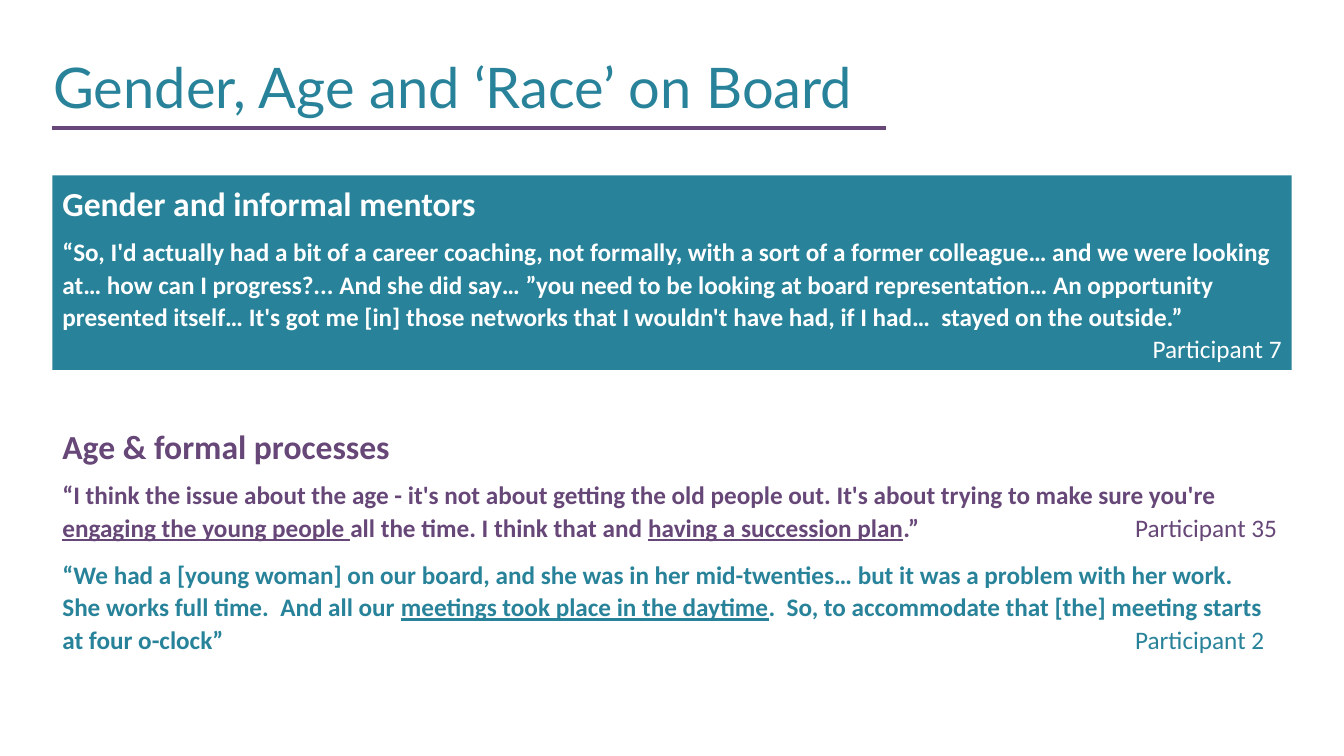
import lxml.etree
import pptx
import pptx.dml.color
import pptx.enum.shapes
import pptx.enum.text
import pptx.oxml.ns
import pptx.util

Inches = pptx.util.Inches
Pt = pptx.util.Pt
Color = pptx.dml.color.RGBColor
Align = pptx.enum.text.PP_ALIGN
Anchor = pptx.enum.text.MSO_ANCHOR
Fit = pptx.enum.text.MSO_AUTO_SIZE
qn = pptx.oxml.ns.qn

TEAL = Color(0x28, 0x83, 0x9A)
PLUM = Color(0x66, 0x47, 0x78)
WHITE = Color(0xFF, 0xFF, 0xFF)

LEFT = 0.52
WIDTH = 12.29
TAB = 10.64

BOLD, LINED, PLAIN = "bold", "lined", "plain"

MENTOR = [
    ("“So, I'd actually had a bit of a career coaching, not formally, with a sort of "
     "a former colleague… and we were looking at… how can I progress?... And she did "
     "say… ”you need to be looking at board representation… An opportunity presented "
     "itself… It's got me [in] those networks that I wouldn't have had, if I had…  "
     "stayed on the outside.”", BOLD),
]
YOUNG = [
    ("“We had a [young woman] on our board, and she was in her mid-twenties… but it "
     "was a problem with her work.  She works full time.  And all our ", BOLD),
    ("meetings took place in the daytime", LINED),
    (".  So, to accommodate that [the] meeting starts at four o-clock”", BOLD),
    ("\tParticipant 2", PLAIN),
]
AGE = [
    ("“I think the issue about the age - it's not about getting the old people out. "
     "It's about trying to make sure you're ", BOLD),
    ("engaging the young people ", LINED),
    ("all the time. I think that and ", BOLD),
    ("having a succession plan", LINED),
    (".”", BOLD),
    ("\tParticipant 35", PLAIN),
]


def add_title(slide, text):
    title = slide.shapes.title
    title.left, title.top = Inches(0.43), Inches(0.53)
    title.width, title.height = Inches(12.38), Inches(0.74)
    frame = title.text_frame
    frame.auto_size = Fit.NONE
    frame.vertical_anchor = Anchor.MIDDLE
    para = frame.paragraphs[0]
    para.alignment = Align.LEFT
    para.line_spacing = 0.9
    run = para.add_run()
    run.text = text
    run.font.name = "Lato"
    run.font.size = Pt(40)
    run.font.color.rgb = TEAL


def add_rule(slide, start, end, top):
    rule = slide.shapes.add_connector(
        pptx.enum.shapes.MSO_CONNECTOR.STRAIGHT,
        Inches(start), Inches(top), Inches(end), Inches(top))
    rule.line.color.rgb = PLUM
    rule.line.width = Pt(2.25)
    lxml.etree.SubElement(rule._element.spPr, qn("a:effectLst"))


def set_frame(shape):
    frame = shape.text_frame
    frame.word_wrap = True
    frame.auto_size = Fit.SHAPE_TO_FIT_TEXT
    frame.vertical_anchor = Anchor.TOP
    return frame


def add_panel(slide, top, height, fill):
    panel = slide.shapes.add_shape(
        pptx.enum.shapes.MSO_SHAPE.RECTANGLE,
        Inches(LEFT), Inches(top), Inches(WIDTH), Inches(height))
    panel.shadow.inherit = False
    panel.fill.solid()
    panel.fill.fore_color.rgb = fill
    panel.line.fill.background()
    return set_frame(panel)


def add_note(slide, top, height):
    return set_frame(slide.shapes.add_textbox(
        Inches(LEFT), Inches(top), Inches(WIDTH), Inches(height)))


def add_para(frame, runs, color, size=18, after=8, align=Align.LEFT):
    first = frame.paragraphs[0]
    para = frame.add_paragraph() if first.runs else first
    tabs = lxml.etree.SubElement(para._p.get_or_add_pPr(), qn("a:tabLst"))
    lxml.etree.SubElement(tabs, qn("a:tab"), pos=str(Inches(TAB)), algn="l")
    para.alignment = align
    para.line_spacing = 1.07
    para.space_after = Pt(after)
    for text, style in runs:
        run = para.add_run()
        run.text = text
        run.font.name = "Calibri"
        run.font.size = Pt(size)
        run.font.bold = style != PLAIN
        run.font.underline = style == LINED
        run.font.color.rgb = color


def main():
    deck = pptx.Presentation()
    deck.slide_width, deck.slide_height = Inches(13.33), Inches(7.5)
    slide = deck.slides.add_slide(deck.slide_layouts[5])

    add_title(slide, "Gender, Age and ‘Race’ on Board")
    add_rule(slide, LEFT, 8.79, 1.27)

    mentor = add_panel(slide, 1.74, 1.93, TEAL)
    add_para(mentor, [("Gender and informal mentors", BOLD)], WHITE, size=24)
    add_para(mentor, MENTOR, WHITE, after=0)
    add_para(mentor, [("Participant 7", PLAIN)], WHITE, after=0, align=Align.RIGHT)

    young = add_panel(slide, 5.48, 1.06, WHITE)
    add_para(young, YOUNG, TEAL)

    age = add_note(slide, 4.15, 1.28)
    add_para(age, [("Age & formal processes", BOLD)], PLUM, size=24)
    add_para(age, AGE, PLUM)

    deck.save("out.pptx")


if __name__ == "__main__":
    main()
